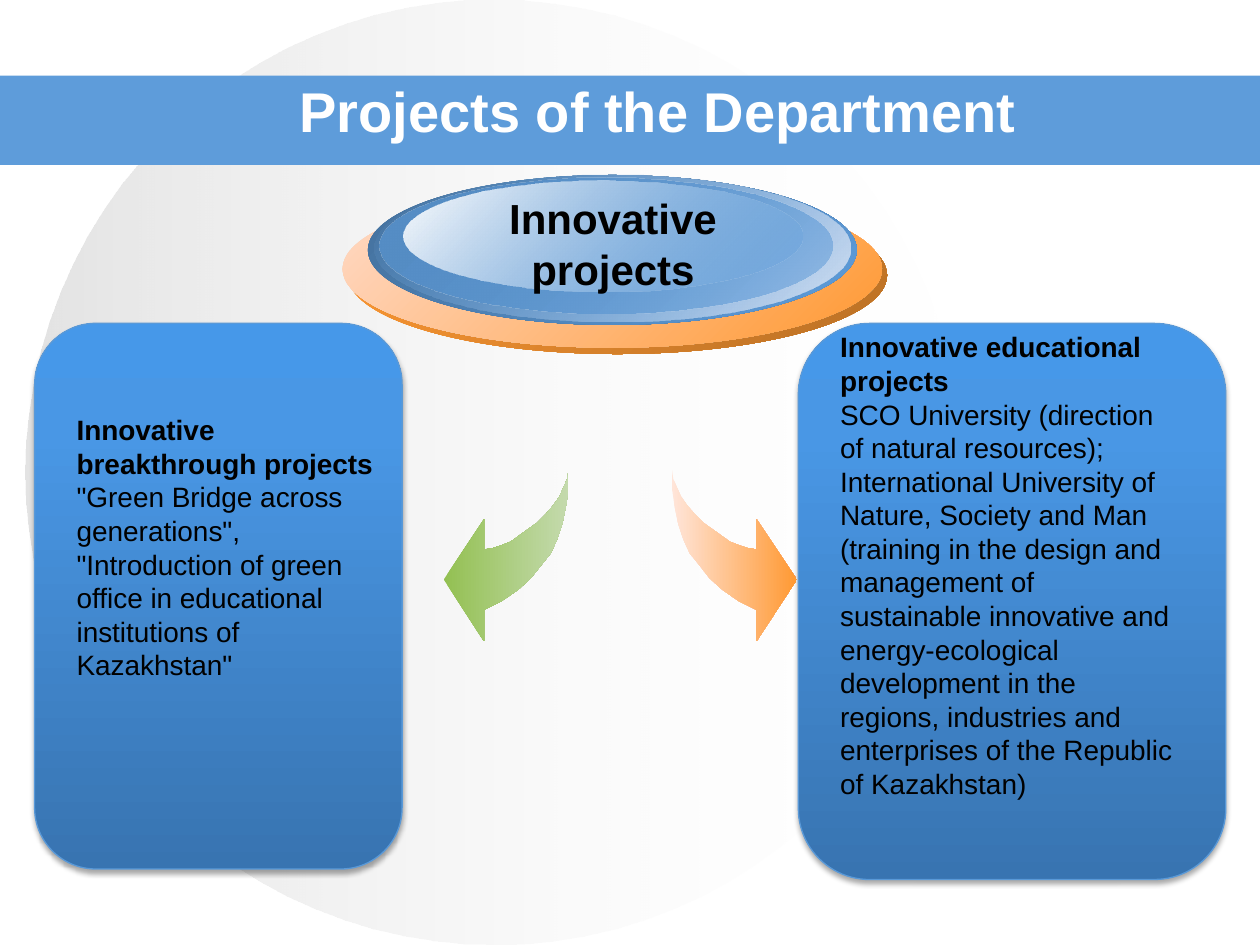
from dataclasses import dataclass

from pptx import Presentation
from pptx.dml.color import RGBColor
from pptx.enum.shapes import MSO_SHAPE
from pptx.enum.text import MSO_ANCHOR, PP_ALIGN
from pptx.oxml import parse_xml
from pptx.oxml.ns import nsdecls, qn
from pptx.util import Pt


@dataclass(frozen=True)
class Theme:
    """Gradient stops are (position %, colour, opacity %)."""
    font: str = "Arial"
    blue: str = "5E9CDA"
    white: str = "FFFFFF"
    black: str = "000000"
    card_line: str = "5999D8"
    title_size: float = 32
    label_size: float = 24
    body_size: float = 16
    label_spacing: float = 29.2
    body_spacing: float = 19.2
    backdrop: tuple = ((0, "C0C0C0", 44), (100, "FFFFFF", 0))
    card: tuple = ((0, "3874B1", 100), (80, "4997E5", 100), (100, "4698E9", 100))
    green_arrow: tuple = ((0, "93C052", 100), (100, "C4DAAD", 100))
    orange_arrow: tuple = ((0, "FFE5D9", 100), (100, "FF9933", 100))
    orange_edge: tuple = ((0, "FF9933", 100), (100, "BA7025", 100))
    orange_disc: tuple = ((0, "FFDAC7", 100), (100, "FF9933", 100))
    blue_edge: tuple = ((0, "43709C", 100), (100, "5E9CDA", 100))
    blue_rim: tuple = ((0, "5E9CDA", 0), (100, "D8E3F3", 100))
    blue_disc: tuple = ((0, "558DC5", 100), (100, "5E9CDA", 48))
    gloss: tuple = ((0, "FFFFFF", 100), (100, "5E9CDA", 38))


class SlideBuilder:
    def __init__(self, slide, theme):
        self.slide = slide
        self.theme = theme

    def paint(self, shape, fill, angle=0):
        """Fill with a colour or gradient stops, without line or shadow."""
        shape.shadow.inherit = False
        shape.line.fill.background()
        if isinstance(fill, str):
            shape.fill.solid()
            shape.fill.fore_color.rgb = RGBColor.from_string(fill)
            return shape
        shape.fill.background()
        stops = "".join(
            f'<a:gs pos="{position * 1000}"><a:srgbClr val="{colour}">'
            f'<a:alpha val="{opacity * 1000}"/></a:srgbClr></a:gs>'
            for position, colour, opacity in fill)
        gradient = parse_xml(
            f'<a:gradFill {nsdecls("a")} rotWithShape="1"><a:gsLst>{stops}</a:gsLst>'
            f'<a:lin ang="{angle * 60000}" scaled="1"/></a:gradFill>')
        properties = shape._element.spPr
        properties.replace(properties.find(qn("a:noFill")), gradient)
        return shape

    def preset(self, kind, box, fill, angle=0, container=None):
        shapes = (container or self.slide).shapes
        shape = shapes.add_shape(kind, *map(Pt, box))
        return self.paint(shape, fill, angle)

    def card(self, box):
        shape = self.preset(MSO_SHAPE.ROUNDED_RECTANGLE, box, self.theme.card, 270)
        shape.line.color.rgb = RGBColor.from_string(self.theme.card_line)
        shape.line.width = Pt(0.75)
        shadow = parse_xml(
            f'<a:outerShdw {nsdecls("a")} blurRad="{Pt(3.1)}" dist="{Pt(1.8)}" '
            'dir="5400000" rotWithShape="0"><a:srgbClr val="000000">'
            '<a:alpha val="35000"/></a:srgbClr></a:outerShdw>')
        shape._element.spPr.find(qn("a:effectLst")).append(shadow)

    def arrow(self, left, top, outline, fill, mirrored=False):
        width = max(x for x, _ in outline)
        points = [(Pt(left + (width - x if mirrored else x)), Pt(top + y))
                  for x, y in outline]
        builder = self.slide.shapes.build_freeform(*points[0])
        builder.add_line_segments(points[1:], close=True)
        self.paint(builder.convert_to_shape(), fill)

    def text(self, box, runs, size, color, align=PP_ALIGN.LEFT,
             anchor=MSO_ANCHOR.TOP, wrap=True, spacing=None):
        """Write one paragraph from (text, bold) runs, a line break between them."""
        frame = self.slide.shapes.add_textbox(*map(Pt, box)).text_frame
        for name, value in {"word_wrap": wrap, "vertical_anchor": anchor}.items():
            setattr(frame, name, value)
        paragraph = frame.paragraphs[0]
        paragraph.alignment = align
        if spacing:
            paragraph.line_spacing = Pt(spacing)
        for index, (content, bold) in enumerate(runs):
            if index:
                paragraph.add_line_break()
            for line_index, line in enumerate(content.split("\n")):
                if line_index:
                    paragraph.add_line_break()
                run = paragraph.add_run()
                run.text = line
                font_format = {"name": self.theme.font, "size": Pt(size), "bold": bold}
                for name, value in font_format.items():
                    setattr(run.font, name, value)
                run.font.color.rgb = RGBColor.from_string(color)


ARROW_OUTLINE = [
    (71.3, 0), (71.3, 10.8), (69.8, 20.9), (67.7, 31), (64.8, 39.6), (61.2, 47.5),
    (55.4, 54.7), (49.7, 61.9), (42.5, 68.4), (33.1, 74.9), (23, 79.9), (23, 97.9),
    (0, 62.6), (23, 28.1), (23, 45.4), (28.1, 44.6), (32.4, 43.2), (38.2, 41),
    (43.2, 37.4), (48.2, 33.8), (53.3, 30.2), (58.3, 25.2), (62.6, 20.2),
    (66.2, 15.1), (68.4, 10.1), (70.6, 5),
]

BREAKTHROUGH_PROJECTS = [
    ("Innovative breakthrough projects", True),
    ('"Green Bridge across generations", "Introduction of green office in '
     'educational institutions of Kazakhstan"', False),
]
EDUCATIONAL_PROJECTS = [
    ("Innovative educational projects", True),
    ("SCO University (direction of natural resources);\n"
     "International University of Nature, Society and Man (training in the design "
     "and management of sustainable innovative and energy-ecological development "
     "in the regions, industries and enterprises of the Republic of Kazakhstan)", False),
]


def main():
    theme = Theme()
    presentation = Presentation()
    presentation.slide_width, presentation.slide_height = Pt(720), Pt(540)
    slide = presentation.slides.add_slide(presentation.slide_layouts[6])
    builder = SlideBuilder(slide, theme)

    builder.preset(MSO_SHAPE.OVAL, (14.4, 0, 535.7, 540), theme.backdrop)
    builder.preset(MSO_SHAPE.RECTANGLE, (0, 43.2, 720, 51), theme.blue)
    builder.text((139, 44, 473.8, 38), [("Projects of the Department", True)],
                 theme.title_size, theme.white, PP_ALIGN.CENTER, MSO_ANCHOR.MIDDLE)

    builder.card((456.2, 184.8, 244.3, 317.8))
    builder.card((19.8, 184.8, 210, 311.8))
    builder.text((36.7, 232.3, 187.2, 162), BREAKTHROUGH_PROJECTS,
                 theme.body_size, theme.black, spacing=theme.body_spacing)

    builder.arrow(253.6, 268.6, ARROW_OUTLINE, theme.green_arrow)
    builder.arrow(384, 268.6, ARROW_OUTLINE, theme.orange_arrow, mirrored=True)

    button = slide.shapes.add_group_shape()
    button_layers = [
        ((198.7, 112.3, 308.2, 90), theme.orange_edge),
        ((195.8, 108.7, 308.2, 90), theme.orange_disc),
        ((210.2, 100, 279.4, 85.7), theme.blue_edge),
        ((213.8, 100, 272.2, 83.5), theme.blue_rim),
        ((216.7, 101.5, 259.2, 77.8), theme.blue_disc),
        ((230.4, 103, 228.2, 63.4), theme.gloss),
    ]
    for box, fill in button_layers:
        builder.preset(MSO_SHAPE.OVAL, box, fill, 45, button)
    builder.text((283, 105.8, 134.6, 65.5), [("Innovative\nprojects", True)],
                 theme.label_size, theme.black, PP_ALIGN.CENTER, wrap=False,
                 spacing=theme.label_spacing)

    builder.text((473, 185, 209.5, 278.6), EDUCATIONAL_PROJECTS,
                 theme.body_size, theme.black, spacing=theme.body_spacing)
    presentation.save("out.pptx")


if __name__ == "__main__":
    main()
